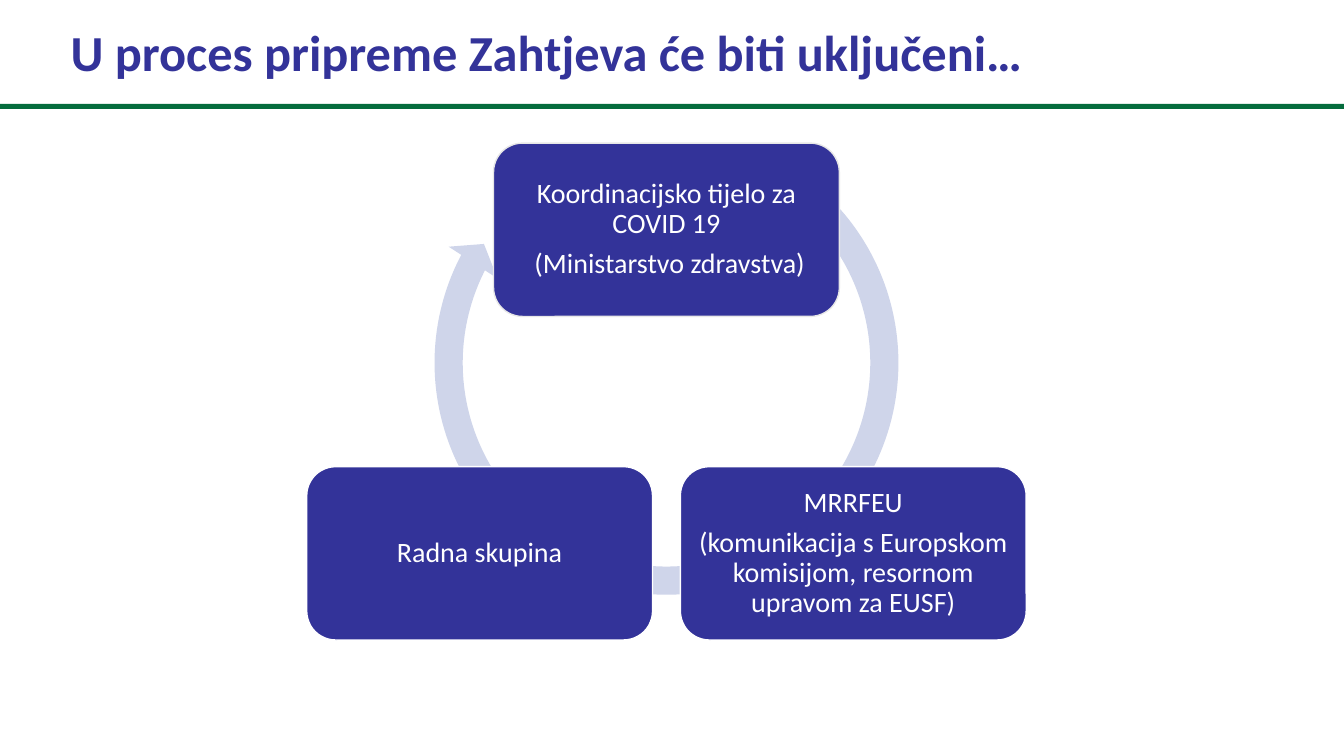
"""Build the slide on who takes part in preparing the request."""
import math
from dataclasses import dataclass

from pptx import Presentation
from pptx.dml.color import RGBColor
from pptx.enum.shapes import MSO_SHAPE
from pptx.enum.text import MSO_ANCHOR, MSO_AUTO_SIZE, PP_ALIGN
from pptx.shapes.autoshape import Shape
from pptx.slide import Slide
from pptx.text.text import TextFrame
from pptx.util import Inches, Pt

RECTANGLE = MSO_SHAPE.RECTANGLE
ROUNDED = MSO_SHAPE.ROUNDED_RECTANGLE
CIRCULAR_ARROW = MSO_SHAPE.CIRCULAR_ARROW
MIDDLE = MSO_ANCHOR.MIDDLE
NO_AUTOFIT = MSO_AUTO_SIZE.NONE
LEFT, CENTER = PP_ALIGN.LEFT, PP_ALIGN.CENTER

SLIDE_WIDTH, SLIDE_HEIGHT = Inches(13.33), Inches(7.5)
TITLE_ONLY = 5


@dataclass(frozen=True)
class Theme:
    """Colours, font and type sizes of the slide."""

    indigo: RGBColor = RGBColor.from_string("333399")
    green: RGBColor = RGBColor.from_string("056C3D")
    pale_blue: RGBColor = RGBColor.from_string("CFD5EA")
    pale_grey: RGBColor = RGBColor.from_string("E7E7E7")
    white: RGBColor = RGBColor.from_string("FFFFFF")
    font: str = "Calibri"
    title_size: int = 36
    body_size: int = 20
    line_spacing: float = 0.9
    space_after: int = 7


THEME = Theme()


@dataclass(frozen=True)
class Area:
    """A rectangle in slide lengths."""

    left: int
    top: int
    width: int
    height: int


@dataclass(frozen=True)
class Participant:
    """A body in the cycle, with its outline colour."""

    paragraphs: tuple[str, ...]
    outline: RGBColor = THEME.white


PARTICIPANTS = (
    Participant(("Koordinacijsko tijelo za COVID 19", " (Ministarstvo zdravstva)"), THEME.pale_grey),
    Participant(("MRRFEU", "(komunikacija s Europskom komisijom, resornom upravom za EUSF)")),
    Participant(("Radna skupina",)),
)


def across(percent: float) -> int:
    """Return a share of the slide's width."""
    return round(SLIDE_WIDTH * percent / 100)


def down(percent: float) -> int:
    """Return a share of the slide's height."""
    return round(SLIDE_HEIGHT * percent / 100)


CYCLE_X, CYCLE_Y, CYCLE_RADIUS = across(49.59), down(58.93), down(28.53)
BOX_WIDTH, BOX_HEIGHT = across(25.73), down(22.93)
ARROW_Y, ARROW_SIZE = down(48), down(65.33)
ARROW_BAND, ARROW_HEAD = 0.057, 0.059
HEAD_SWEEP, END_ANGLE, START_ANGLE = 5.67, 207.41, 304.23
DEGREE = 0.6


def centred(x: int, y: int, width: int, height: int) -> Area:
    """Return the area of the given size around a point."""
    return Area(round(x - width / 2), round(y - height / 2), width, height)


def add_filled(slide: Slide, kind: MSO_SHAPE, area: Area, fill: RGBColor) -> Shape:
    """Add a flat shape without an outline."""
    shape = slide.shapes.add_shape(kind, area.left, area.top, area.width, area.height)
    shape.shadow.inherit = False
    shape.fill.solid()
    shape.fill.fore_color.rgb = fill
    shape.line.fill.background()
    return shape


def write(frame: TextFrame, paragraphs: tuple[str, ...], size: int, color: RGBColor,
          align: PP_ALIGN, bold: bool = False, space_after: int = 0) -> None:
    """Write paragraphs into a vertically centred frame."""
    frame.word_wrap = True
    frame.auto_size = NO_AUTOFIT
    frame.vertical_anchor = MIDDLE
    for index, text in enumerate(paragraphs):
        paragraph = frame.add_paragraph() if index else frame.paragraphs[0]
        paragraph.alignment = align
        paragraph.line_spacing = THEME.line_spacing
        paragraph.space_after = Pt(space_after)
        run = paragraph.add_run()
        run.text = text
        run.font.name = THEME.font
        run.font.size = Pt(size)
        run.font.bold = bold
        run.font.color.rgb = color


def add_heading(slide: Slide) -> None:
    """Place the title and the green rule under it."""
    title = slide.shapes.title
    title.left, title.top = across(4.5), down(3.87)
    title.width, title.height = across(96.25), down(6.8)
    write(title.text_frame, ("U proces pripreme Zahtjeva će biti uključeni…",),
          THEME.title_size, THEME.indigo, LEFT, bold=True)
    add_filled(slide, RECTANGLE, Area(0, down(13.73), SLIDE_WIDTH, down(0.67)), THEME.green)


def add_cycle_arrow(slide: Slide) -> None:
    """Draw the arrow that runs clockwise behind the participants."""
    area = centred(CYCLE_X, ARROW_Y, ARROW_SIZE, ARROW_SIZE)
    arrow = add_filled(slide, CIRCULAR_ARROW, area, THEME.pale_blue)
    angles = [angle * DEGREE for angle in (HEAD_SWEEP, END_ANGLE, START_ANGLE)]
    for index, value in enumerate((ARROW_BAND, *angles, ARROW_HEAD)):
        arrow.adjustments[index] = value


def add_participant(slide: Slide, participant: Participant, angle: float) -> None:
    """Draw a participant at an angle clockwise from the top of the cycle."""
    x = round(CYCLE_X + CYCLE_RADIUS * math.sin(angle))
    y = round(CYCLE_Y - CYCLE_RADIUS * math.cos(angle))
    box = add_filled(slide, ROUNDED, centred(x, y, BOX_WIDTH, BOX_HEIGHT), THEME.indigo)
    box.line.color.rgb = participant.outline
    box.line.width = Pt(1)
    frame = box.text_frame
    frame.margin_left = frame.margin_right = Inches(0.08)
    frame.margin_top = frame.margin_bottom = Inches(0.08)
    write(frame, participant.paragraphs, THEME.body_size, THEME.white, CENTER,
          space_after=THEME.space_after)


def main() -> None:
    """Build and save the presentation."""
    presentation = Presentation()
    presentation.slide_width, presentation.slide_height = SLIDE_WIDTH, SLIDE_HEIGHT
    slide = presentation.slides.add_slide(presentation.slide_layouts[TITLE_ONLY])
    add_heading(slide)
    add_cycle_arrow(slide)
    for index, participant in enumerate(PARTICIPANTS):
        add_participant(slide, participant, math.tau * index / len(PARTICIPANTS))
    presentation.save("out.pptx")


if __name__ == "__main__":
    main()
